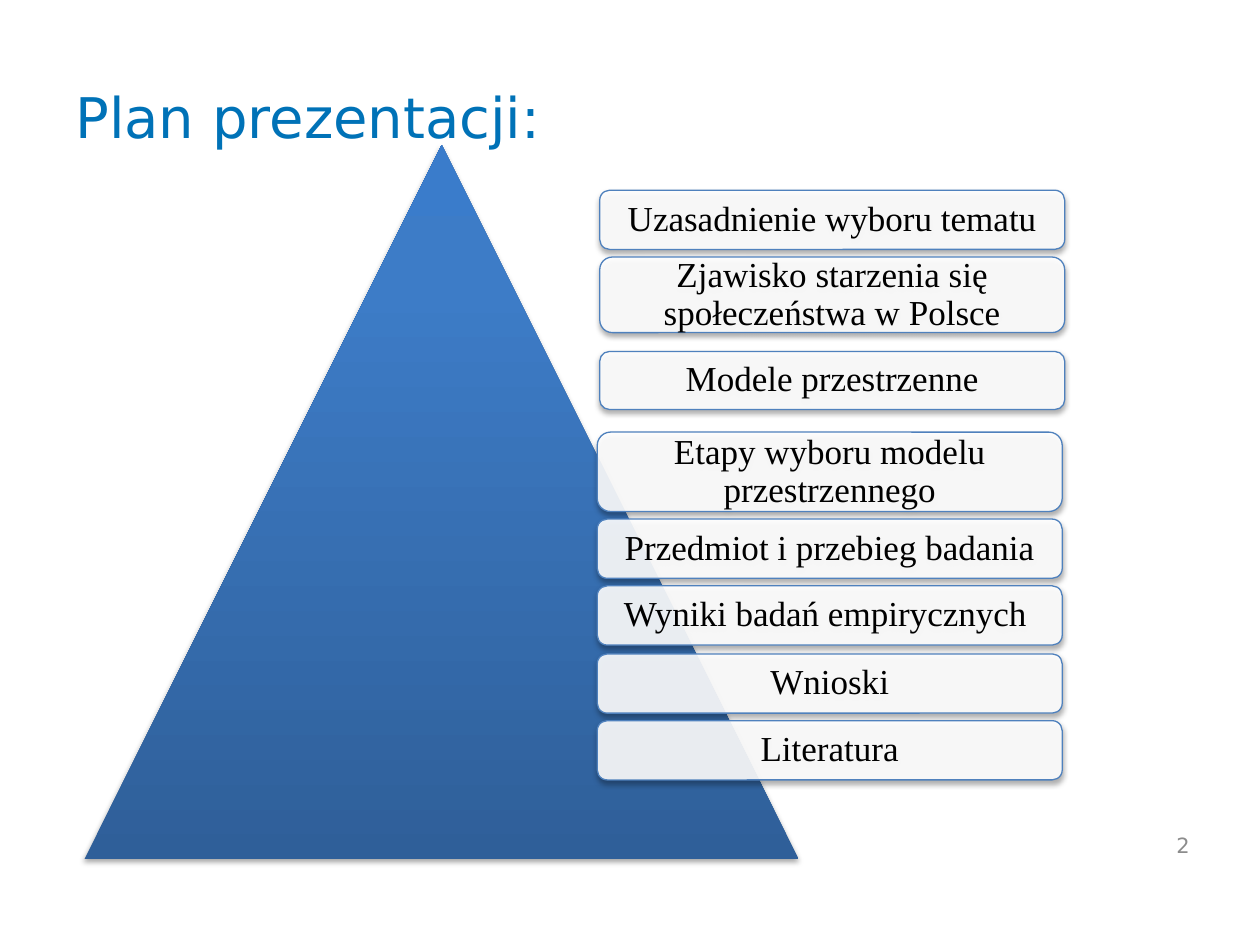
from copy import deepcopy
from dataclasses import dataclass

from lxml import etree
from pptx import Presentation
from pptx.dml.color import RGBColor
from pptx.enum.shapes import MSO_SHAPE
from pptx.enum.text import MSO_ANCHOR, PP_ALIGN
from pptx.oxml.ns import qn
from pptx.shapes.autoshape import Shape
from pptx.slide import Slide
from pptx.text.text import TextFrame
from pptx.util import Inches, Pt

TRIANGLE, ROUNDED = MSO_SHAPE.ISOSCELES_TRIANGLE, MSO_SHAPE.ROUNDED_RECTANGLE
LEFT, CENTER, RIGHT = PP_ALIGN.LEFT, PP_ALIGN.CENTER, PP_ALIGN.RIGHT
MIDDLE = MSO_ANCHOR.MIDDLE

BLACK = RGBColor(0x00, 0x00, 0x00)
WHITE = RGBColor(0xFF, 0xFF, 0xFF)
TITLE_BLUE = RGBColor(0x00, 0x72, 0xB7)
BORDER_BLUE = RGBColor(0x4F, 0x81, 0xBD)
NUMBER_GRAY = RGBColor(0x8C, 0x8C, 0x8C)
PYRAMID_STOPS = (
    (0.0, RGBColor(0x2F, 0x5F, 0x99)),
    (0.8, RGBColor(0x3D, 0x7C, 0xC7)),
    (1.0, RGBColor(0x3A, 0x7C, 0xCB)),
)

HEADING_FONT = "DejaVu Sans"
TOPIC_FONT = "Times New Roman"
UPPER_LEFT, LOWER_LEFT = 4.76, 4.74
TOPIC_WIDTH = 3.69


@dataclass(frozen=True)
class Topic:
    text: str
    left: float
    top: float
    height: float = 0.47


TOPICS = (
    Topic("Uzasadnienie wyboru tematu", UPPER_LEFT, 1.51),
    Topic("Zjawisko starzenia się społeczeństwa w Polsce", UPPER_LEFT, 2.04, 0.6),
    Topic("Modele przestrzenne", UPPER_LEFT, 2.79, 0.46),
    Topic("Etapy wyboru modelu przestrzennego", LOWER_LEFT, 3.43, 0.63),
    Topic("Przedmiot i przebieg badania", LOWER_LEFT, 4.12),
    Topic("Wyniki badań empirycznych ", LOWER_LEFT, 4.65),
    Topic("Wnioski", LOWER_LEFT, 5.19),
    Topic("Literatura", LOWER_LEFT, 5.72),
)


def write_text(frame: TextFrame, text: str, font: str, size: float,
               color: RGBColor, align: PP_ALIGN) -> None:
    frame.word_wrap = True
    frame.vertical_anchor = MIDDLE
    paragraph = frame.paragraphs[0]
    paragraph.alignment = align
    run = paragraph.add_run()
    run.text = text
    run.font.name = font
    run.font.size = Pt(size)
    run.font.color.rgb = color


def add_soft_shadow(shape: Shape) -> None:
    shape.shadow.inherit = False
    effects = shape._element.spPr.find(qn("a:effectLst"))
    shadow = etree.SubElement(
        effects, qn("a:outerShdw"), blurRad=str(Pt(3.1)), dist=str(Pt(1.8)),
        dir="5400000", rotWithShape="0")
    color = etree.SubElement(shadow, qn("a:srgbClr"), val=str(BLACK))
    etree.SubElement(color, qn("a:alpha"), val="35000")


def add_pyramid(slide: Slide) -> None:
    pyramid = slide.shapes.add_shape(
        TRIANGLE, Inches(0.67), Inches(1.15), Inches(5.67), Inches(5.67))
    pyramid.fill.gradient()
    pyramid.fill.gradient_angle = 90
    stop_list = pyramid._element.spPr.find(".//" + qn("a:gsLst"))
    stop_list.append(deepcopy(stop_list[-1]))
    for stop, (position, color) in zip(pyramid.fill.gradient_stops, PYRAMID_STOPS):
        stop.position = position
        stop.color.rgb = color
    pyramid.line.fill.background()
    add_soft_shadow(pyramid)


def add_topic(slide: Slide, topic: Topic) -> None:
    box = slide.shapes.add_shape(
        ROUNDED, Inches(topic.left), Inches(topic.top),
        Inches(TOPIC_WIDTH), Inches(topic.height))
    box.fill.solid()
    box.fill.fore_color.rgb = WHITE
    fill_color = box._element.spPr.find(qn("a:solidFill"))[0]
    etree.SubElement(fill_color, qn("a:alpha"), val="90000")
    box.line.color.rgb = BORDER_BLUE
    box.line.width = Pt(0.75)
    add_soft_shadow(box)
    frame = box.text_frame
    frame.margin_left = frame.margin_right = Inches(0.1)
    frame.margin_top = frame.margin_bottom = Inches(0.08)
    write_text(frame, topic.text, TOPIC_FONT, 20, BLACK, CENTER)
    frame.paragraphs[0].line_spacing = 0.9


def main() -> None:
    presentation = Presentation()
    presentation.slide_width = Inches(10)
    presentation.slide_height = Inches(7.5)
    slide = presentation.slides.add_slide(presentation.slide_layouts[6])

    title = slide.shapes.add_textbox(Inches(0.5), Inches(0.3), Inches(9), Inches(1.25))
    write_text(title.text_frame, "Plan prezentacji:", HEADING_FONT, 32, TITLE_BLUE, LEFT)

    add_pyramid(slide)
    for topic in TOPICS:
        add_topic(slide, topic)

    number = slide.shapes.add_textbox(
        Inches(8.86), Inches(6.51), Inches(0.68), Inches(0.4))
    write_text(number.text_frame, "2", HEADING_FONT, 12, NUMBER_GRAY, RIGHT)

    presentation.save("out.pptx")


if __name__ == "__main__":
    main()
